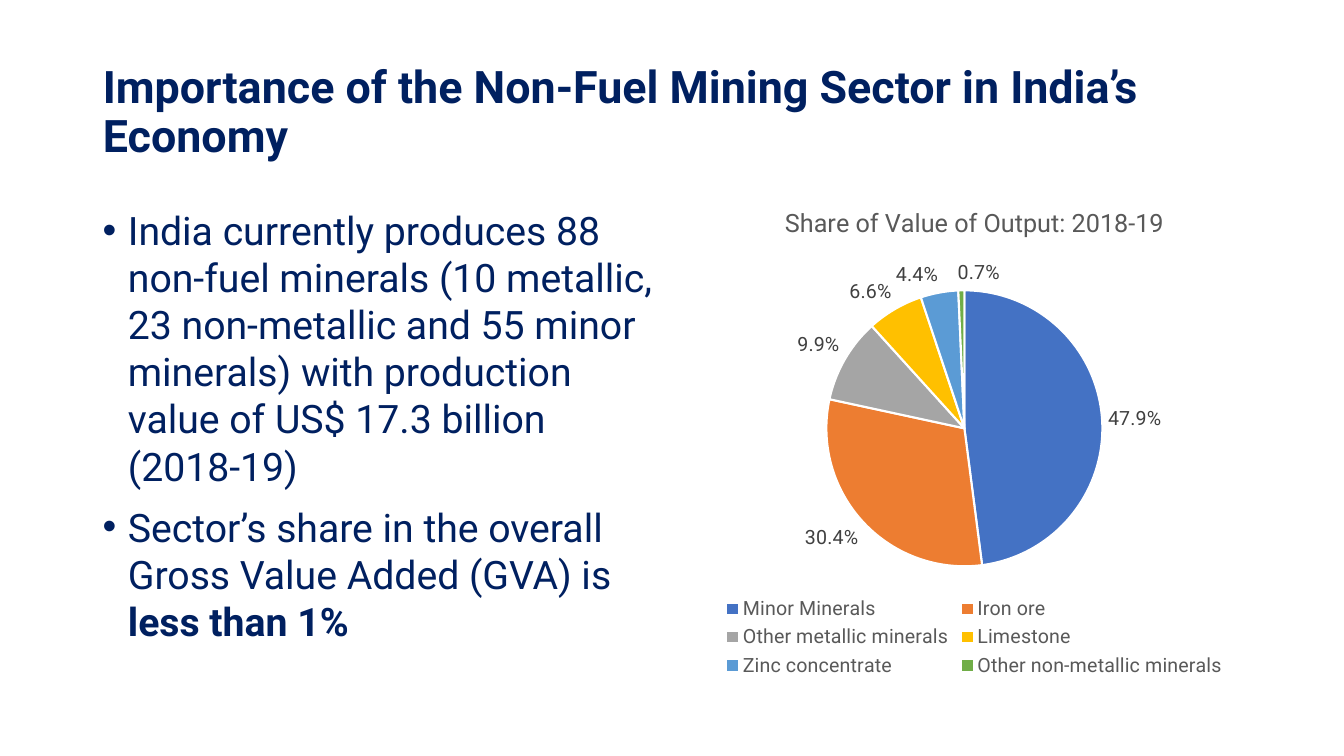
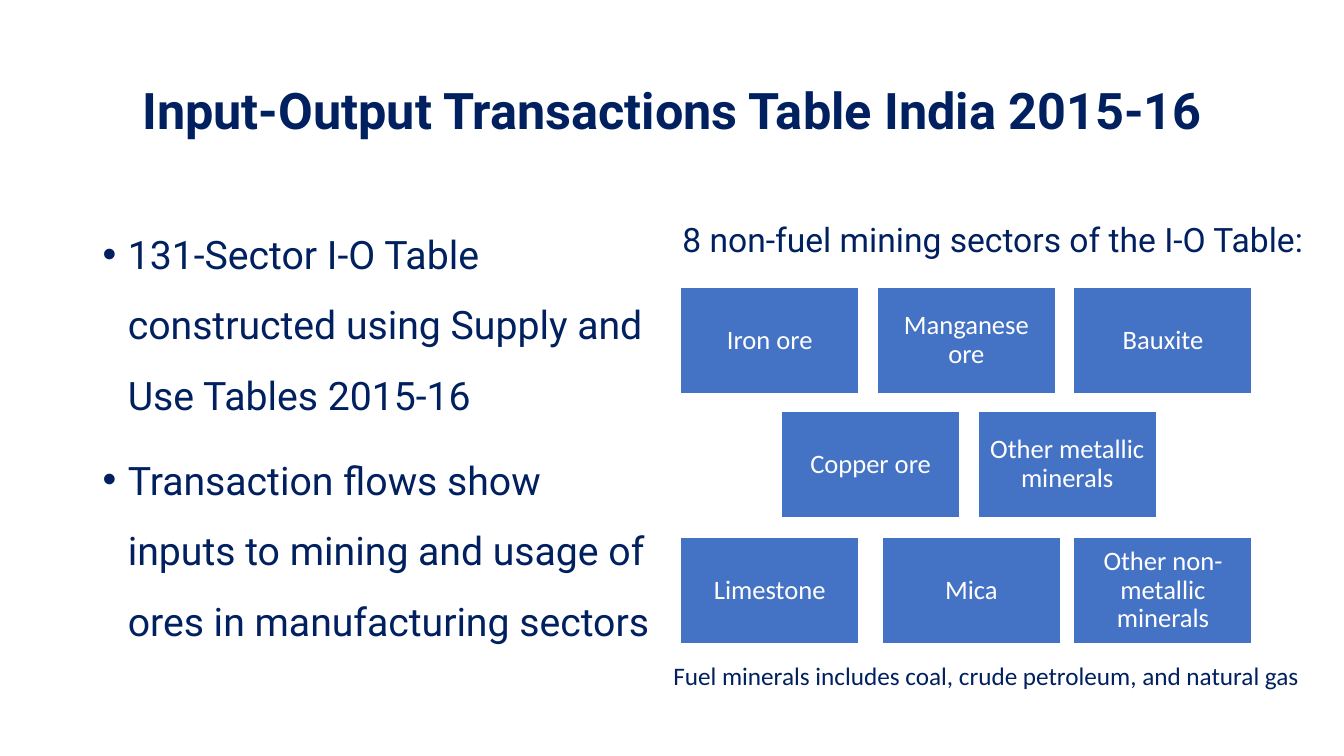
from dataclasses import dataclass
from typing import Any

from lxml.etree import SubElement
from pptx import Presentation
from pptx.chart.data import CategoryChartData
from pptx.dml.color import RGBColor
from pptx.enum.chart import XL_CHART_TYPE, XL_LABEL_POSITION, XL_LEGEND_POSITION
from pptx.enum.shapes import MSO_SHAPE
from pptx.enum.text import MSO_ANCHOR, MSO_AUTO_SIZE, PP_ALIGN
from pptx.oxml import parse_xml
from pptx.oxml.ns import nsdecls, qn
from pptx.util import Inches, Pt

NAVY = RGBColor(0x00, 0x20, 0x60)
WHITE = RGBColor(0xFF, 0xFF, 0xFF)
BLUE = RGBColor(0x44, 0x72, 0xC4)
ORANGE = RGBColor(0xED, 0x7D, 0x31)
SILVER = RGBColor(0xA5, 0xA5, 0xA5)
GOLD = RGBColor(0xFF, 0xC0, 0x00)
SKY = RGBColor(0x5B, 0x9B, 0xD5)
GREEN = RGBColor(0x70, 0xAD, 0x47)
GRAY = RGBColor(0x59, 0x59, 0x59)
DARK = RGBColor(0x40, 0x40, 0x40)

HEAD = "Roboto"
PLAIN = "Calibri"
MARGIN = 0.92
TILE_W, TILE_H = 1.77, 1.06
COLS = [6.75 + 1.95 * i for i in range(3)]


@dataclass
class Slice:
    name: str
    share: float
    color: RGBColor


@dataclass
class Row:
    top: float
    lefts: list[float]
    names: list[str]


@dataclass
class Run:
    text: str
    bold: bool = False


SLICES = [
    Slice("Minor Minerals", 0.479, BLUE),
    Slice("Iron ore", 0.304, ORANGE),
    Slice("Other metallic minerals", 0.099, SILVER),
    Slice("Limestone", 0.066, GOLD),
    Slice("Zinc concentrate", 0.044, SKY),
    Slice("Other non-metallic minerals", 0.007, GREEN),
]
ROWS = [
    Row(2.85, COLS, ["Iron ore", "Manganese ore", "Bauxite"]),
    Row(4.08, [7.75, 9.7], ["Copper ore", "Other metallic minerals"]),
    Row(5.33, [COLS[0], 8.75, COLS[2]],
        ["Limestone", "Mica", "Other non-metallic minerals"]),
]
FACTS = [
    [Run("India currently produces 88 non-fuel minerals (10 metallic, "
         "23 non-metallic and 55 minor minerals) with production value of "
         "US$ 17.3 billion (2018-19)")],
    [Run("Sector’s share in the overall Gross Value Added (GVA) is"),
     Run(" less than 1%", True)],
]
NOTES = [
    [Run("131-Sector I-O Table constructed using Supply and Use Tables 2015-16")],
    [Run("Transaction flows show inputs to mining and usage of ores "
         "in manufacturing sectors")],
]


def assign(target: Any, **values: Any) -> None:
    """Set each named attribute on the target."""
    for key, value in values.items():
        setattr(target, key, value)


def ink(font: Any, size: float, color: RGBColor = NAVY, name: str = HEAD,
        bold: bool = False) -> None:
    assign(font, size=Pt(size), name=name, bold=bold)
    font.color.rgb = color


def place(left: float, top: float, width: float, height: float) -> list[int]:
    return [Inches(n) for n in (left, top, width, height)]


def add_slide(deck: Any, title: str, size: int, align: Any) -> Any:
    slide = deck.slides.add_slide(deck.slide_layouts[5])
    shape = slide.shapes.title
    box = place(MARGIN, 0.4, 11.5, 1.45)
    assign(shape, **dict(zip(("left", "top", "width", "height"), box)))
    frame = shape.text_frame
    assign(frame, text=title, word_wrap=True, auto_size=MSO_AUTO_SIZE.NONE,
           vertical_anchor=MSO_ANCHOR.MIDDLE)
    line = frame.paragraphs[0]
    assign(line, alignment=align, line_spacing=0.9)
    ink(line.runs[0].font, size, bold=True)
    return slide


def add_list(slide: Any, items: list[list[Run]], width: float,
             spacing: float) -> None:
    frame = slide.shapes.add_textbox(*place(MARGIN, 2, width, 4.76)).text_frame
    frame.word_wrap = True
    for i, runs in enumerate(items):
        line = frame.add_paragraph() if i else frame.paragraphs[0]
        props = line._p.get_or_add_pPr()
        props.set("marL", str(Inches(0.25)))
        props.set("indent", str(-Inches(0.25)))
        SubElement(props, qn("a:buFont"), typeface="Arial")
        SubElement(props, qn("a:buChar"), char="•")
        assign(line, line_spacing=spacing, space_before=Pt(10 if i else 0))
        ink(line.font, 28)
        for part in runs:
            run = line.add_run()
            run.text = part.text
            ink(run.font, 28, bold=part.bold)


def add_label(slide: Any, text: str, box: list[int], size: int, name: str,
              wrap: bool) -> None:
    frame = slide.shapes.add_textbox(*box).text_frame
    assign(frame, text=text, word_wrap=wrap)
    ink(frame.paragraphs[0].runs[0].font, size, name=name)


def add_tile(slide: Any, text: str, left: float, top: float) -> None:
    tile = slide.shapes.add_shape(
        MSO_SHAPE.RECTANGLE, *place(left, top, TILE_W, TILE_H))
    tile.shadow.inherit = False
    tile.fill.solid()
    tile.fill.fore_color.rgb = BLUE
    tile.line.color.rgb = WHITE
    tile.line.width = Pt(1)
    frame = tile.text_frame
    sides = ("left", "top", "right", "bottom")
    assign(frame, text=text, word_wrap=True, vertical_anchor=MSO_ANCHOR.MIDDLE,
           **{f"margin_{side}": Inches(0.08) for side in sides})
    line = frame.paragraphs[0]
    assign(line, alignment=PP_ALIGN.CENTER, line_spacing=0.9)
    ink(line.runs[0].font, 19, WHITE, PLAIN)


def add_pie(slide: Any) -> None:
    data = CategoryChartData(number_format="0.0%")
    data.categories = [s.name for s in SLICES]
    data.add_series("Series 1", [s.share for s in SLICES])
    chart = slide.shapes.add_chart(
        XL_CHART_TYPE.PIE, *place(6.75, 1.85, 5.83, 4.91), data).chart
    ink(chart.font, 14, GRAY)

    assign(chart, has_title=True, has_legend=True)
    frame = chart.chart_title.text_frame
    frame.text = "Share of Value of Output: 2018-19"
    ink(frame.paragraphs[0].runs[0].font, 18, GRAY)
    chart.chart_title.include_in_layout = False
    assign(chart.legend, position=XL_LEGEND_POSITION.BOTTOM,
           include_in_layout=False)
    ink(chart.legend.font, 14, GRAY)

    plot = chart.plots[0]
    assign(plot, vary_by_categories=True, has_data_labels=True)
    assign(plot.data_labels, show_value=True, show_percentage=False,
           number_format="0.0%", number_format_is_linked=False,
           position=XL_LABEL_POSITION.OUTSIDE_END)
    ink(plot.data_labels.font, 14, DARK)
    points = plot.series[0].points
    for i, part in enumerate(SLICES):
        look = points[i].format
        look.fill.solid()
        look.fill.fore_color.rgb = part.color
        look.line.color.rgb = WHITE
        look.line.width = Pt(1.5)
        label = points[i].data_label
        label.position = XL_LABEL_POSITION.OUTSIDE_END
        ink(label.font, 14, DARK)
    nudge(plot.series[0], len(SLICES) - 1, 0.03)


def nudge(series: Any, index: int, shift: float) -> None:
    """Move one data label right by a fraction of the chart width."""
    mark = series._element.find(f".//c:dLbl/c:idx[@val='{index}']",
                                {"c": qn("c:x")[1:-2]})
    mark.addnext(parse_xml(
        f'<c:layout {nsdecls("c")}><c:manualLayout><c:x val="{shift}"/>'
        '<c:y val="0"/></c:manualLayout></c:layout>'))


def main() -> None:
    deck = Presentation()
    assign(deck, slide_width=Inches(13.33), slide_height=Inches(7.5))

    slide = add_slide(
        deck, "Importance of the Non-Fuel Mining Sector in India’s Economy",
        32, PP_ALIGN.LEFT)
    add_list(slide, FACTS, 5.75, 1.0)
    add_pie(slide)

    slide = add_slide(deck, "Input-Output Transactions Table India 2015-16",
                      36, PP_ALIGN.CENTER)
    add_list(slide, NOTES, 5.67, 1.5)
    for row in ROWS:
        for left, name in zip(row.lefts, row.names):
            add_tile(slide, name, left, row.top)
    add_label(slide, "8 non-fuel mining sectors of the I-O Table:",
              place(6.67, 2.12, 6.66, 0.5), 24, HEAD, True)
    add_label(slide,
              "Fuel minerals includes coal, crude petroleum, and natural gas",
              place(6.58, 6.5, 6.48, 0.4), 18, PLAIN, False)
    deck.save("out.pptx")


if __name__ == "__main__":
    main()
